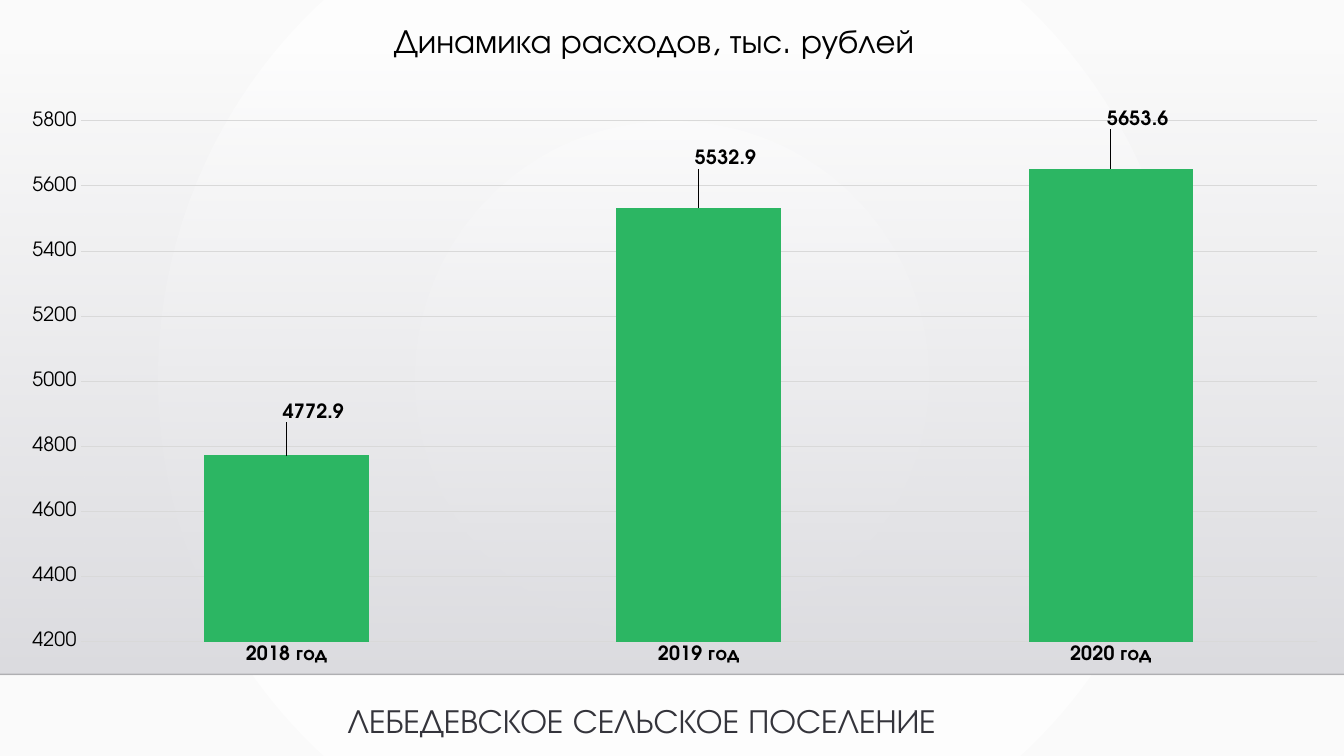
import pptx
import pptx.chart.data
import pptx.dml.color
import pptx.enum.chart
import pptx.enum.shapes
import pptx.enum.text
import pptx.oxml
import pptx.oxml.ns
import pptx.util

Pt = pptx.util.Pt
FONT = "TeX Gyre Adventor"
SLIDE_WIDTH, SLIDE_HEIGHT = 960, 540
BAND_TOP, BAND_BOTTOM = 36.72, 481.68
EXPENSES = {"2018 год": 4772.9, "2019 год": 5532.9, "2020 год": 5653.6}
# Shift of each value label, as a share of the chart's width and height
LABEL_SHIFTS = [(0.02, -0.05), (0.02, -0.06), (0.02, -0.06)]
PLOT_LAYOUT = {"x": 0.06, "y": 0.04, "w": 0.92, "h": 0.9}


def color(hex_code):
    return pptx.dml.color.RGBColor.from_string(hex_code)


def xml(text):
    namespaces = pptx.oxml.ns.nsdecls("a", "p", "c")
    return pptx.oxml.parse_xml(text.replace("@ns", namespaces, 1))


def style_font(font, size, hex_code, bold=False):
    font.name = FONT
    font.size = Pt(size)
    font.bold = bold
    font.color.rgb = color(hex_code)


def manual_layout(values, modes=""):
    parts = "".join(f'<c:{key} val="{value}"/>' for key, value in values.items())
    return xml(f"<c:layout @ns><c:manualLayout>{modes}{parts}</c:manualLayout></c:layout>")


def add_background(slide):
    slide.background.fill.solid()
    properties = slide.element.cSld.find(pptx.oxml.ns.qn("p:bg"))[0]
    solid = properties.find(pptx.oxml.ns.qn("a:solidFill"))
    properties.replace(solid, xml(
        '<a:gradFill @ns rotWithShape="1"><a:gsLst>'
        '<a:gs pos="0"><a:srgbClr val="FFFFFF"/></a:gs>'
        '<a:gs pos="100000"><a:srgbClr val="FAFAFA"/></a:gs></a:gsLst>'
        '<a:path path="circle"><a:fillToRect l="50000" t="50000" r="50000" b="50000"/>'
        "</a:path></a:gradFill>"))


def add_band(slide, left, top, width, height):
    # Grey that fades in downwards
    band = slide.shapes.add_shape(pptx.enum.shapes.MSO_SHAPE.RECTANGLE,
                                  Pt(left), Pt(top), Pt(width), Pt(height))
    band.shadow.inherit = False
    band.line.fill.background()
    band.fill.solid()
    solid = band.element.spPr.find(pptx.oxml.ns.qn("a:solidFill"))
    band.element.spPr.replace(solid, xml(
        '<a:gradFill @ns rotWithShape="1"><a:gsLst>'
        '<a:gs pos="0"><a:srgbClr val="DCDCE0"><a:alpha val="0"/></a:srgbClr></a:gs>'
        '<a:gs pos="100000"><a:srgbClr val="DEDEE2"/></a:gs></a:gsLst>'
        '<a:lin ang="5400000" scaled="0"/></a:gradFill>'))

    # Thin rule along the lower edge
    rule = slide.shapes.add_connector(pptx.enum.shapes.MSO_CONNECTOR.STRAIGHT, Pt(left),
                                      Pt(top + height), Pt(left + width), Pt(top + height))
    rule.line.width = Pt(1)
    rule.line.color.rgb = color("000001")
    rule.element.spPr.find(".//" + pptx.oxml.ns.qn("a:srgbClr")).append(
        xml('<a:alpha @ns val="20000"/>'))
    rule.element.spPr.append(xml("<a:effectLst @ns/>"))


def add_caption(slide, left, top, width, height, text, hex_code, wrap, align, spacing):
    frame = slide.shapes.add_textbox(Pt(left), Pt(top), Pt(width), Pt(height)).text_frame
    frame.word_wrap = wrap
    frame.text = text
    paragraph = frame.paragraphs[0]
    paragraph.alignment = align
    paragraph.line_spacing = spacing
    style_font(paragraph.runs[0].font, 24, hex_code)


def add_expense_chart(slide, left, top, width, height):
    data = pptx.chart.data.CategoryChartData()
    data.categories = list(EXPENSES)
    data.add_series("Series 1", list(EXPENSES.values()))
    chart = slide.shapes.add_chart(pptx.enum.chart.XL_CHART_TYPE.COLUMN_CLUSTERED, Pt(left),
                                   Pt(top), Pt(width), Pt(height), data).chart
    chart.has_title = False
    chart.has_legend = False
    style_font(chart.font, 14, "000000")

    # Axes
    for axis, bold in ((chart.category_axis, True), (chart.value_axis, False)):
        axis.major_tick_mark = pptx.enum.chart.XL_TICK_MARK.NONE
        axis.minor_tick_mark = pptx.enum.chart.XL_TICK_MARK.NONE
        axis.format.line.fill.background()
        style_font(axis.tick_labels.font, 14, "000000", bold)
    scale = chart.value_axis
    scale.minimum_scale, scale.maximum_scale, scale.major_unit = 4200, 5800, 200
    scale.has_major_gridlines = True
    scale.major_gridlines.format.line.width = Pt(0.75)
    scale.major_gridlines.format.line.color.rgb = color("D9D9D9")

    # Plot area
    plot_area = chart.element.chart.plotArea
    for layout in plot_area.findall(pptx.oxml.ns.qn("c:layout")):
        plot_area.remove(layout)
    plot_area.insert(0, manual_layout(
        PLOT_LAYOUT, '<c:layoutTarget val="inner"/><c:xMode val="edge"/><c:yMode val="edge"/>'))

    # Columns
    plot = chart.plots[0]
    plot.gap_width = 150
    plot.vary_by_categories = False
    expenses = plot.series[0]
    expenses.invert_if_negative = False
    expenses.format.fill.solid()
    expenses.format.fill.fore_color.rgb = color("2CB663")

    # Value labels
    outside = pptx.enum.chart.XL_LABEL_POSITION.OUTSIDE_END
    expenses.data_labels.show_value = True
    expenses.data_labels.position = outside
    style_font(expenses.data_labels.font, 14, "000000", True)
    for index in range(len(LABEL_SHIFTS)):
        label = expenses.points[index].data_label
        style_font(label.font, 14, "000000", True)
        label.position = outside
    label_elements = expenses.data_labels._element.findall(pptx.oxml.ns.qn("c:dLbl"))
    for element, (x, y) in zip(label_elements, LABEL_SHIFTS):
        element.insert(1, manual_layout({"x": x, "y": y}))


def main():
    deck = pptx.Presentation()
    deck.slide_width, deck.slide_height = Pt(SLIDE_WIDTH), Pt(SLIDE_HEIGHT)
    slide = deck.slides.add_slide(deck.slide_layouts[6])
    align = pptx.enum.text.PP_ALIGN
    add_background(slide)
    add_band(slide, 0, BAND_TOP, SLIDE_WIDTH, BAND_BOTTOM - BAND_TOP)
    add_caption(slide, 89.28, 13.68, 756, 69.12, "Динамика расходов, тыс. рублей",
                "000000", True, align.CENTER, 0.9)
    add_caption(slide, 241.2, 496.08, 478.08, 36, "ЛЕБЕДЕВСКОЕ СЕЛЬСКОЕ ПОСЕЛЕНИЕ",
                "34343B", False, align.LEFT, 1.0)
    add_expense_chart(slide, 0, 69.84, SLIDE_WIDTH, 413.28)
    deck.save("out.pptx")


if __name__ == "__main__":
    main()
